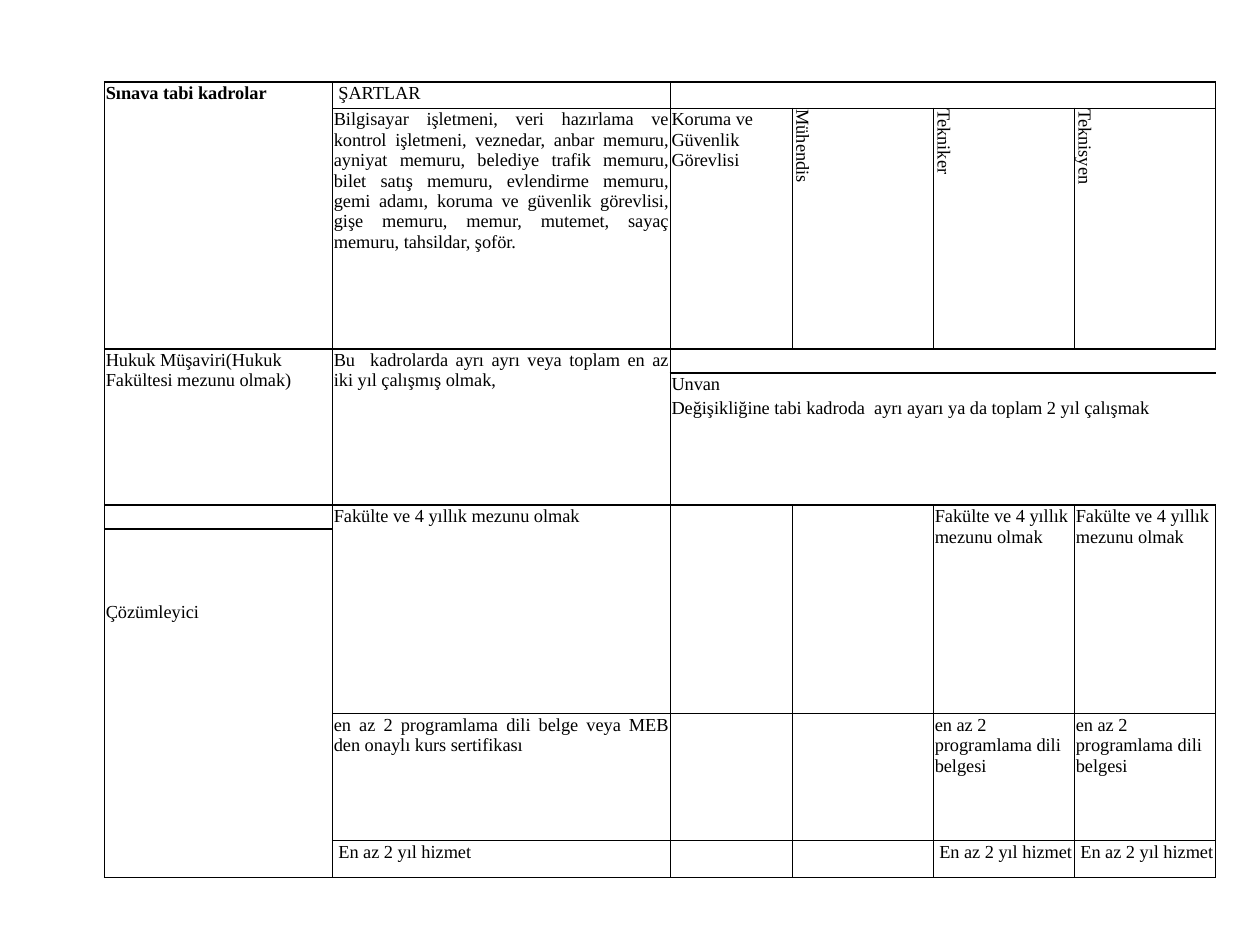
from lxml.etree import SubElement
from pptx import Presentation
from pptx.dml.color import RGBColor
from pptx.enum.text import PP_ALIGN
from pptx.oxml.ns import qn
from pptx.util import Inches, Pt

BLACK = RGBColor(0x00, 0x00, 0x00)
FONT = "Times New Roman"
NO_STYLE = "{2D5ABB26-0587-4C30-8999-92F81FD0307C}"
COLUMN_WIDTHS = [1.81, 2.68, 0.97, 1.12, 1.12, 1.12]
ROW_HEIGHTS = [0.13, 0.21, 1.91, 0.19, 0.19, 0.28, 0.19, 0.19, 0.2,
               0.19, 0.19, 0.19, 0.19, 0.3, 0.19, 0.19, 0.19, 0, 1.01, 0.29]
LAST_COLUMN = len(COLUMN_WIDTHS) - 1

presentation = Presentation()
presentation.slide_width = Inches(10)
presentation.slide_height = Inches(7.5)
slide = presentation.slides.add_slide(presentation.slide_layouts[6])

frame = slide.shapes.add_table(len(ROW_HEIGHTS), len(COLUMN_WIDTHS), Inches(0.83),
                               Inches(0.52), Inches(8.82), Inches(6.61))
table = frame.table
table.first_row = False
table.horz_banding = False
table._tbl.tblPr.find(qn("a:tableStyleId")).text = NO_STYLE
for column, width in zip(table.columns, COLUMN_WIDTHS):
    column.width = Inches(width)
for row, height in zip(table.rows, ROW_HEIGHTS):
    row.height = Inches(height)


def write_cell(cell, text, bold=False, align=PP_ALIGN.LEFT, vertical=False):
    paragraph = cell.text_frame.paragraphs[0]
    paragraph.alignment = align
    run = paragraph.add_run()
    run.text = text
    run.font.name = FONT
    run.font.size = Pt(10.5)
    run.font.bold = bold
    run.font.color.rgb = BLACK
    if vertical:
        cell._tc.get_or_add_tcPr().set("vert", "vert")


justified = PP_ALIGN.JUSTIFY
faculty = "Fakülte ve 4 yıllık mezunu olmak"
certificate = "en az 2 programlama dili belgesi"
service = " En az 2 yıl hizmet"
write_cell(table.cell(1, 0), "Sınava tabi kadrolar", bold=True)
write_cell(table.cell(1, 1), " ŞARTLAR", align=justified)
write_cell(table.cell(2, 1),
           "Bilgisayar işletmeni, veri hazırlama ve kontrol işletmeni, veznedar, anbar memuru, "
           "ayniyat memuru, belediye trafik memuru, bilet satış memuru, evlendirme memuru, "
           "gemi adamı, koruma ve güvenlik görevlisi, gişe memuru, memur, mutemet, sayaç "
           "memuru, tahsildar, şoför.", align=justified)
write_cell(table.cell(2, 2), "Koruma ve Güvenlik Görevlisi")
for column, title in enumerate(["Mühendis", "Tekniker", "Teknisyen"], 3):
    write_cell(table.cell(2, column), title, vertical=True)
write_cell(table.cell(3, 0), "Hukuk Müşaviri(Hukuk Fakültesi mezunu olmak)")
write_cell(table.cell(3, 1), "Bu  kadrolarda ayrı ayrı veya toplam en az iki yıl çalışmış olmak,",
           align=justified)
write_cell(table.cell(4, 2), "Unvan")
write_cell(table.cell(5, 2), "Değişikliğine tabi kadroda  ayrı ayarı ya da toplam 2 yıl çalışmak")
write_cell(table.cell(13, 0), "Çözümleyici")
write_cell(table.cell(18, 1), "en az 2 programlama dili belge veya MEB den onaylı kurs sertifikası ",
           align=justified)
for column in (4, 5):
    write_cell(table.cell(18, column), certificate)
for column in (1, 4, 5):
    write_cell(table.cell(9, column), faculty)
    write_cell(table.cell(19, column), service)

outlines = [(1, 8, 0, 0), (9, 19, 0, 0), (1, 1, 1, LAST_COLUMN), (3, 8, 1, 1),
            (3, 8, 2, LAST_COLUMN)]
for top, bottom in [(2, 2), (9, 17), (18, 18), (19, 19)]:
    outlines += [(top, bottom, column, column) for column in range(1, LAST_COLUMN + 1)]

borders = {}
for top, bottom, left, right in outlines:
    bottom_width = 0.5 if top >= 9 and left > 0 else 1
    top_width = 0.5 if top >= 18 else 1
    for row in range(top, bottom + 1):
        for column in range(left, right + 1):
            edges = [("a:lnL", column == left, 1), ("a:lnR", column == right, 1),
                     ("a:lnT", row == top, top_width), ("a:lnB", row == bottom, bottom_width)]
            borders[row, column] = [(tag, width) for tag, outer, width in edges if outer]

for row in range(len(ROW_HEIGHTS)):
    for column in range(len(COLUMN_WIDTHS)):
        cell = table.cell(row, column)
        cell.margin_left = cell.margin_right = cell.margin_top = Inches(0.01)
        cell.margin_bottom = 0
        for tag, width in borders.get((row, column), []):
            line = SubElement(cell._tc.get_or_add_tcPr(), qn(tag), w=str(Pt(width)))
            fill = SubElement(line, qn("a:solidFill"))
            SubElement(fill, qn("a:srgbClr"), val=str(BLACK))
        cell.fill.background()
        if not cell.text:
            SubElement(cell.text_frame.paragraphs[0]._p, qn("a:endParaRPr"), sz="100")

merges = [(1, 2, 0, 0), (3, 8, 0, 0), (3, 8, 1, 1)]
merges += [(row, row, 2, LAST_COLUMN) for row in range(3, 9)]
merges += [(9, 17, column, column) for column in range(1, LAST_COLUMN + 1)]
for top, bottom, left, right in merges:
    table.cell(top, left).merge(table.cell(bottom, right))

presentation.save("out.pptx")
